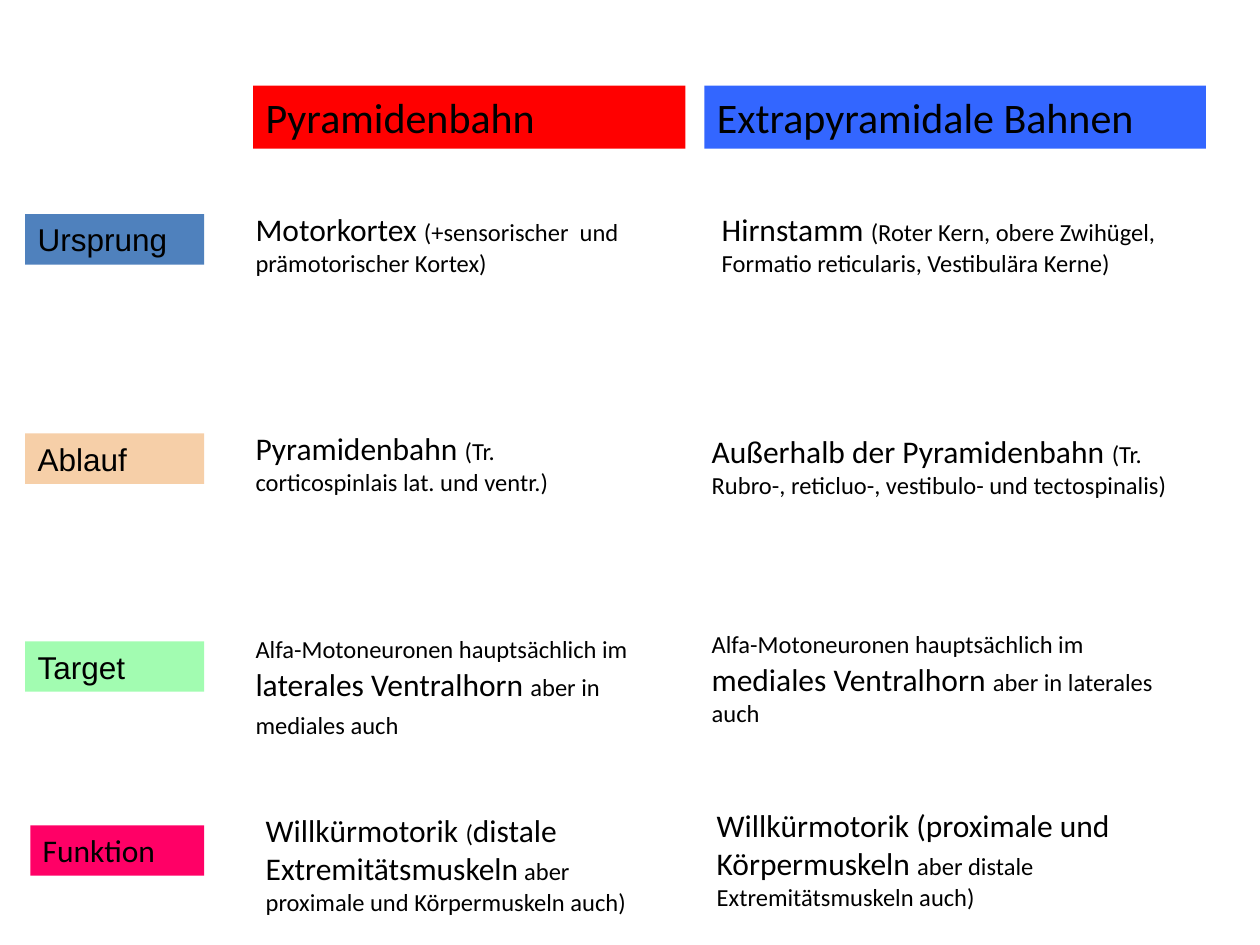
import pptx
import pptx.util
import pptx.dml.color
import pptx.enum.shapes
import pptx.enum.text

Inches = pptx.util.Inches


def color(code):
    return pptx.dml.color.RGBColor.from_string(code)


def add_box(left, top, width, height, runs, fill=None):
    """Add a text box, or a filled box; runs are (text, size, font)."""
    place = [Inches(n) for n in (left, top, width, height)]
    if fill:
        box = slide.shapes.add_shape(
            pptx.enum.shapes.MSO_SHAPE.RECTANGLE, *place)
        box.shadow.inherit = False
        box.fill.solid()
        box.fill.fore_color.rgb = color(fill)
        box.line.fill.background()
    else:
        box = slide.shapes.add_textbox(*place)
    frame = box.text_frame
    frame.word_wrap = True
    frame.auto_size = pptx.enum.text.MSO_AUTO_SIZE.SHAPE_TO_FIT_TEXT
    frame.vertical_anchor = pptx.enum.text.MSO_ANCHOR.TOP
    para = frame.paragraphs[0]
    para.alignment = pptx.enum.text.PP_ALIGN.LEFT
    for text, size, font in runs:
        run = para.add_run()
        run.text = text
        run.font.size = pptx.util.Pt(size)
        run.font.name = font
        run.font.color.rgb = color("000000")


deck = pptx.Presentation()
deck.slide_width, deck.slide_height = Inches(10), Inches(7.5)
slide = deck.slides.add_slide(deck.slide_layouts[6])
SANS, BODY = "Arial", "Calibri"
BIG, SMALL = 18, 14

# Column heads
heads = [
    (2.01, 3.43, "Pyramidenbahn", "FF0000"),
    (5.59, 3.98, "Extrapyramidale Bahnen", "3366FF"),
]
for left, width, text, fill in heads:
    add_box(left, 0.68, width, 0.5, [(text, 24, BODY)], fill)

# Row labels, all ending at the same right edge
EDGE = 1.62
labels = [
    (0.2, 1.7, "Ursprung", SANS, "4F81BD"),
    (0.2, 3.44, "Ablauf", SANS, "F6CFA8"),
    (0.2, 5.09, "Target", SANS, "A2FCB1"),
    (0.24, 6.55, "Funktion", BODY, "FF0066"),
]
for left, top, text, font, fill in labels:
    add_box(left, top, EDGE - left, 0.4, [(text, BIG, font)], fill)

# Cell texts, row by row
cells = [
    # Ursprung
    (1.93, 1.62, 3.31, 0.63, [
        ("Motorkortex ", BIG, BODY),
        ("(+sensorischer  und prämotorischer Kortex)", SMALL, BODY)]),
    (5.63, 1.62, 4.17, 0.63, [
        ("Hirnstamm ", BIG, BODY),
        ("(Roter Kern, obere Zwihügel, Formatio reticularis, "
         "Vestibulära Kerne)", SMALL, BODY)]),
    # Ablauf
    (1.93, 3.36, 3.19, 0.63, [
        ("Pyramidenbahn ", BIG, BODY),
        ("(Tr. corticospinlais lat. und ventr.)", SMALL, BODY)]),
    (5.55, 3.38, 4.09, 0.87, [
        ("Außerhalb der Pyramidenbahn ", BIG, BODY),
        ("(Tr. Rubro-, reticluo-, vestibulo- und tectospinalis)",
         SMALL, BODY)]),
    # Target
    (1.93, 4.93, 3.43, 0.93, [
        ("Alfa-Motoneuronen hauptsächlich im", SMALL, BODY),
        (" laterales Ventralhorn ", BIG, BODY),
        ("aber in mediales auch", SMALL, BODY),
        (" ", BIG, SANS)]),
    (5.55, 4.89, 3.86, 1.28, [
        ("Alfa-Motoneuronen hauptsächlich im", SMALL, BODY),
        (" mediales Ventralhorn ", BIG, BODY),
        ("aber in laterales auch", SMALL, BODY)]),
    # Funktion
    (2.01, 6.39, 3.39, 0.93, [
        ("Willkürmotorik ", BIG, BODY),
        ("(", SMALL, BODY),
        ("distale Extremitätsmuskeln", BIG, BODY),
        (" aber proximale und Körpermuskeln auch)", SMALL, BODY)]),
    (5.59, 6.35, 3.94, 0.93, [
        ("Willkürmotorik (proximale und Körpermuskeln ", BIG, BODY),
        ("aber distale Extremitätsmuskeln auch)", SMALL, BODY)]),
]
for cell in cells:
    add_box(*cell)

deck.save("out.pptx")
